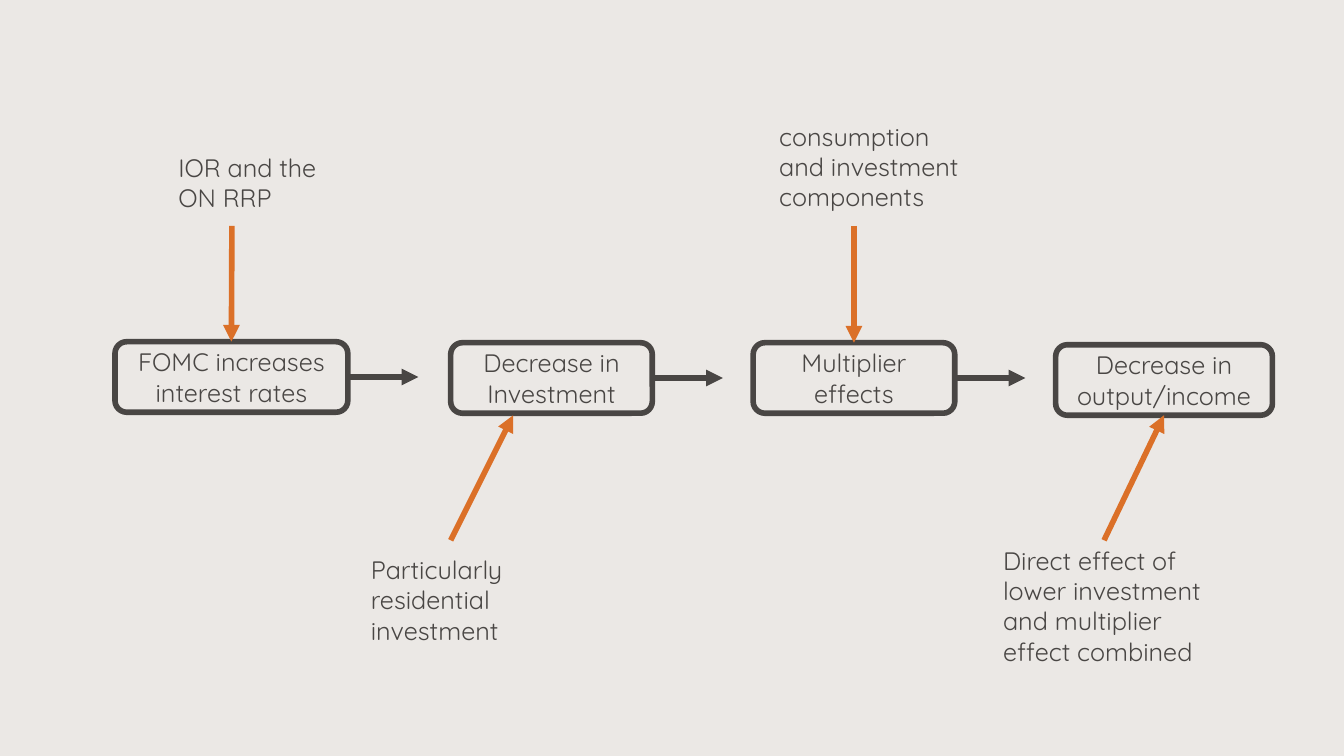
"""Build a flow slide tracing a rate increase through to output and income."""
from lxml import etree
from pptx import Presentation
from pptx.dml.color import RGBColor
from pptx.enum.shapes import MSO_CONNECTOR, MSO_SHAPE
from pptx.enum.text import MSO_ANCHOR, MSO_AUTO_SIZE, PP_ALIGN
from pptx.oxml.ns import qn
from pptx.util import Inches, Pt

STRAIGHT = MSO_CONNECTOR.STRAIGHT
ROUNDED = MSO_SHAPE.ROUNDED_RECTANGLE
MIDDLE = MSO_ANCHOR.MIDDLE
GROW = MSO_AUTO_SIZE.SHAPE_TO_FIT_TEXT
LEFT, CENTER = PP_ALIGN.LEFT, PP_ALIGN.CENTER
TOP_SIDE, BOTTOM_SIDE, RIGHT_SIDE = 0, 2, 3
COLORS = {"background": "EBE8E5", "dark": "494644", "accent": "DB7028"}
BOX_HEIGHT = 0.7
ARROW_LENGTH = 0.7


def write_text(shape, text, alignment):
    """Fill a shape with one wrapped paragraph."""
    frame = shape.text_frame
    frame.word_wrap = True
    frame.text = text
    para = frame.paragraphs[0]
    para.alignment = alignment
    span = para.runs[0]
    span.font.name = "Quicksand"
    span.font.size = Pt(18)
    span.font.color.rgb = RGBColor.from_string(COLORS["dark"])


def add_arrow(page, start, end, color):
    """Draw a straight arrow between two points given in inches."""
    arrow = page.shapes.add_connector(STRAIGHT, *map(Inches, start + end))
    arrow.line.color.rgb = RGBColor.from_string(COLORS[color])
    arrow.line.width = Pt(4)
    etree.SubElement(arrow.line._get_or_add_ln(), qn("a:tailEnd"), type="triangle")
    etree.SubElement(arrow._element.spPr, qn("a:effectLst"))
    return arrow


deck = Presentation()
deck.slide_width, deck.slide_height = Inches(13.33), Inches(7.5)
page = deck.slides.add_slide(deck.slide_layouts[6])
page.background.fill.solid()
page.background.fill.fore_color.rgb = RGBColor.from_string(COLORS["background"])

steps = [
    ("FOMC increases interest rates", 1.14, 3.39, 2.31),
    ("Decrease in Investment", 4.47, 3.4, 2),
    ("Multiplier effects", 7.47, 3.4, 2),
    ("Decrease in output/income", 10.47, 3.42, 2.15),
]
boxes = []
for text, left, top, width in steps:
    box = page.shapes.add_shape(ROUNDED, *map(Inches, (left, top, width, BOX_HEIGHT)))
    box.shadow.inherit = False
    box.fill.background()
    box.line.color.rgb = RGBColor.from_string(COLORS["dark"])
    box.line.width = Pt(4)
    box.text_frame.vertical_anchor = MIDDLE
    write_text(box, text, CENTER)
    boxes.append(box)

for box, (text, left, top, width) in zip(boxes[:-1], steps):
    right, middle = left + width, top + BOX_HEIGHT / 2
    arrow = add_arrow(page, (right, middle), (right + ARROW_LENGTH, middle), "dark")
    arrow.begin_connect(box, RIGHT_SIDE)

add_arrow(page, (2.3, 2.24), (2.3, 3.39), "accent").end_connect(boxes[0], TOP_SIDE)
add_arrow(page, (4.47, 5.36), (5.09, 4.12), "accent")
add_arrow(page, (8.47, 2.24), (8.47, 3.4), "accent").end_connect(boxes[2], TOP_SIDE)
add_arrow(page, (10.95, 5.36), (11.54, 4.12), "accent").end_connect(boxes[3], BOTTOM_SIDE)

remarks = [
    ("IOR and the ON RRP", 1.67, 1.46, 1.78, 0.71),
    ("Particularly residential investment", 3.58, 5.45, 1.78, 1.01),
    ("consumption and investment components", 7.63, 1.15, 2.19, 1.01),
    ("Direct effect of lower investment and multiplier effect combined", 9.85, 5.36, 2.41, 1.31),
]
for text, *place in remarks:
    remark = page.shapes.add_textbox(*map(Inches, place))
    write_text(remark, text, LEFT)
    remark.text_frame.auto_size = GROW

deck.save("out.pptx")
